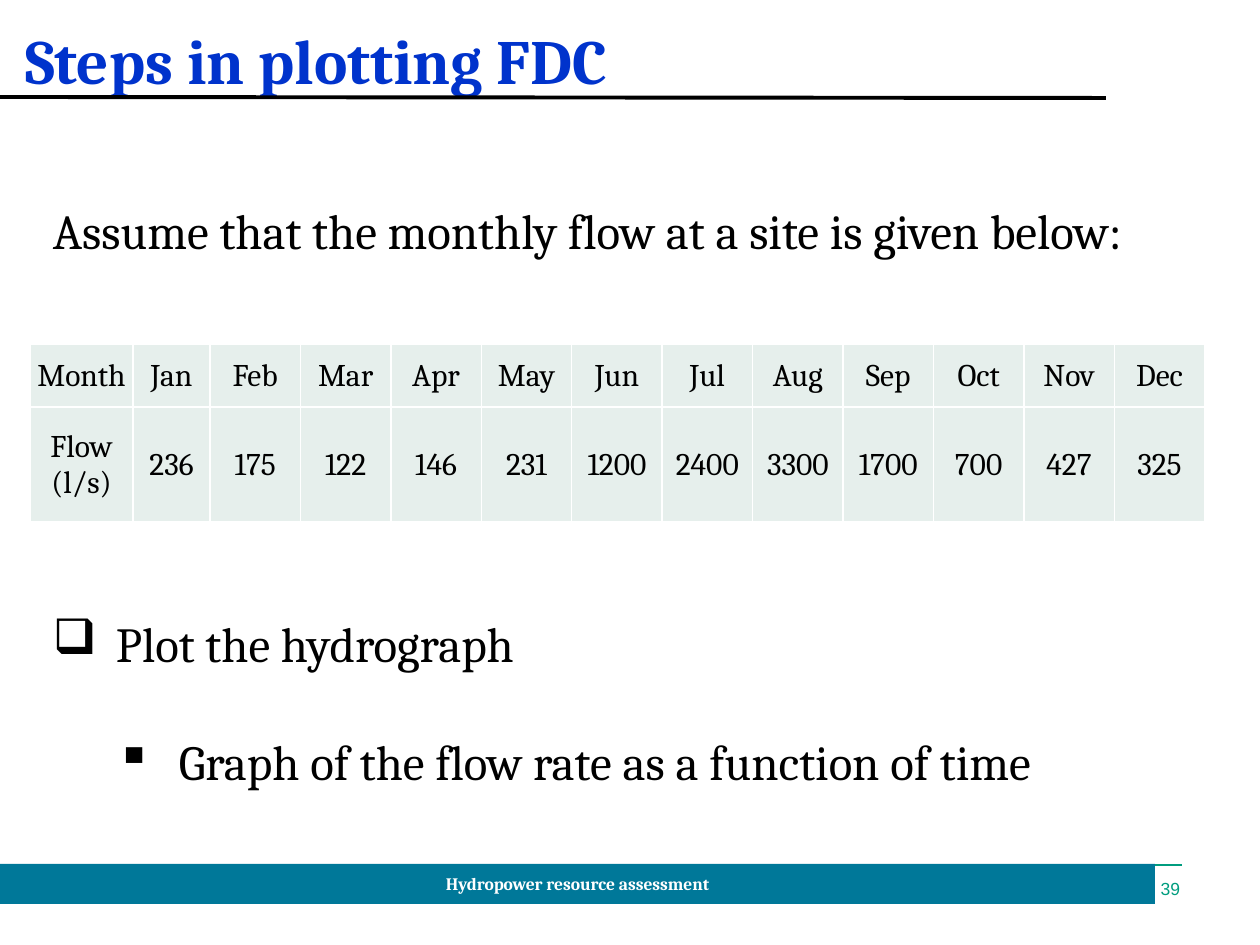
from lxml import etree
from pptx import Presentation
from pptx.dml.color import RGBColor
from pptx.enum.shapes import MSO_CONNECTOR, MSO_SHAPE
from pptx.enum.text import MSO_ANCHOR, MSO_AUTO_SIZE, PP_ALIGN
from pptx.oxml.ns import qn
from pptx.util import Emu, Pt

STRAIGHT = MSO_CONNECTOR.STRAIGHT
RECTANGLE = MSO_SHAPE.RECTANGLE
MIDDLE, BOTTOM, TOP = MSO_ANCHOR.MIDDLE, MSO_ANCHOR.BOTTOM, MSO_ANCHOR.TOP
LEFT, CENTER, RIGHT, JUSTIFY = PP_ALIGN.LEFT, PP_ALIGN.CENTER, PP_ALIGN.RIGHT, PP_ALIGN.JUSTIFY
NO_AUTOFIT = MSO_AUTO_SIZE.NONE

PX_PER_INCH = 126
COLORS = {
    "title": "0033CC",
    "text": "000000",
    "white": "FFFFFF",
    "footer": "007899",
    "accent": "009D7F",
    "cell": "E6EFEC",
}
MONTHS = "Jan Feb Mar Apr May Jun Jul Aug Sep Oct Nov Dec".split()
FLOWS = [236, 175, 122, 146, 231, 1200, 2400, 3300, 1700, 700, 427, 325]


def px(length):
    return Emu(round(length * 914400 / PX_PER_INCH))


def color(name):
    return RGBColor.from_string(COLORS[name])


def format_paragraph(paragraph, size, color_name, align, bold=False, font="Cambria"):
    paragraph.alignment = align
    for run in paragraph.runs:
        run.font.name = font
        run.font.size = Pt(size)
        run.font.bold = bold
        run.font.color.rgb = color(color_name)


def prepare_frame(text_frame, anchor, margins=(0, 0, 0, 0)):
    text_frame.word_wrap = True
    text_frame.auto_size = NO_AUTOFIT
    text_frame.vertical_anchor = anchor
    (text_frame.margin_left, text_frame.margin_top,
     text_frame.margin_right, text_frame.margin_bottom) = map(px, margins)


def add_line(slide, start, end, color_name, width):
    line = slide.shapes.add_connector(STRAIGHT, *map(px, start + end))
    line.line.color.rgb = color(color_name)
    line.line.width = Pt(width)
    etree.SubElement(line._element.spPr, qn("a:effectLst"))


def set_bullet(paragraph, character, margin, indent):
    properties = paragraph._p.get_or_add_pPr()
    properties.set("marL", str(px(margin)))
    properties.set("indent", str(px(indent)))
    bullet_color = etree.SubElement(properties, qn("a:buClr"))
    etree.SubElement(bullet_color, qn("a:srgbClr"), val=COLORS["text"])
    etree.SubElement(properties, qn("a:buChar"), char=character)


def set_borders(cell):
    properties = cell._tc.get_or_add_tcPr()
    for position, side in enumerate(("lnL", "lnR", "lnT", "lnB")):
        border = etree.Element(qn("a:" + side), w=str(Pt(1)))
        fill = etree.SubElement(border, qn("a:solidFill"))
        etree.SubElement(fill, qn("a:srgbClr"), val=COLORS["white"])
        properties.insert(position, border)


def add_footer(slide, left, top, width, height):
    add_line(slide, (left + 79, top + 1), (left + 1182, top + 1), "accent", 1)
    number = slide.shapes.add_textbox(px(left + width - 16), px(top + 14), px(41), px(21))
    prepare_frame(number.text_frame, MIDDLE)
    number.text_frame.text = "39"
    format_paragraph(number.text_frame.paragraphs[0], 10, "accent", RIGHT, font="Arial")

    bar = slide.shapes.add_shape(RECTANGLE, px(left), px(top), px(width), px(height))
    bar.shadow.inherit = False
    bar.fill.solid()
    bar.fill.fore_color.rgb = color("footer")
    bar.line.fill.background()
    prepare_frame(bar.text_frame, MIDDLE, (13, 6, 13, 6))
    bar.text_frame.text = "Hydropower resource assessment"
    format_paragraph(bar.text_frame.paragraphs[0], 10, "white", CENTER, bold=True)


def add_title(slide, left, top, width, height):
    title = slide.shapes.title
    title.left, title.top, title.width, title.height = map(px, (left, top, width, height))
    prepare_frame(title.text_frame, BOTTOM)
    title.text_frame.text = "Steps in plotting FDC"
    format_paragraph(title.text_frame.paragraphs[0], 36, "title", LEFT, bold=True)
    add_line(slide, (0, top + height), (1106, top + height + 1), "text", 2.25)


def add_body(slide, left, top, width, height):
    body = slide.shapes.add_textbox(*map(px, (left, top, width, height)))
    text_frame = body.text_frame
    prepare_frame(text_frame, TOP, (13, 6, 13, 6))
    text_frame.text = "Assume that the monthly flow at a site is given below:"
    format_paragraph(text_frame.paragraphs[0], 28, "text", JUSTIFY)
    steps = [
        ("Plot the hydrograph", "❑", 0, 63, 354),
        ("Graph of the flow rate as a function of time", "▪", 1, 126, 60),
    ]
    for text, bullet, level, margin, gap in steps:
        paragraph = text_frame.add_paragraph()
        paragraph.text = text
        paragraph.level = level
        set_bullet(paragraph, bullet, margin, -63)
        paragraph.space_before = Pt(round(px(gap).pt))
        format_paragraph(paragraph, 28, "text", JUSTIFY)


def add_flow_table(slide, left, top, width, row_heights):
    rows = [["Month"] + MONTHS, ["Flow (l/s)"] + FLOWS]
    frame = slide.shapes.add_table(
        len(rows), len(rows[0]), px(left), px(top), px(width), px(sum(row_heights)))
    table = frame.table
    table.first_row = False
    table.horz_banding = False
    first_widths = [103, 77]
    other_count = len(rows[0]) - len(first_widths)
    other_width = (width - sum(first_widths)) / other_count
    for column, column_width in zip(table.columns, first_widths + [other_width] * other_count):
        column.width = px(column_width)
    for row, height in zip(table.rows, row_heights):
        row.height = px(height)
    for row, values in zip(table.rows, rows):
        for cell, value in zip(row.cells, values):
            cell.text = str(value)
            cell.vertical_anchor = MIDDLE
            cell.margin_left = cell.margin_right = cell.margin_top = px(1)
            cell.margin_bottom = 0
            cell.fill.solid()
            cell.fill.fore_color.rgb = color("cell")
            set_borders(cell)
            format_paragraph(cell.text_frame.paragraphs[0], 18, "text", CENTER)


def main():
    presentation = Presentation()
    presentation.slide_width, presentation.slide_height = px(1260), px(945)
    slide = presentation.slides.add_slide(presentation.slide_layouts[5])
    add_footer(slide, 0, 864, 1155, 40)
    add_title(slide, 25, 20, 940, 77)
    add_body(slide, 40, 195, 1155, 606)
    add_flow_table(slide, 30, 344, 1175, [63, 115])
    presentation.save("out.pptx")


if __name__ == "__main__":
    main()
